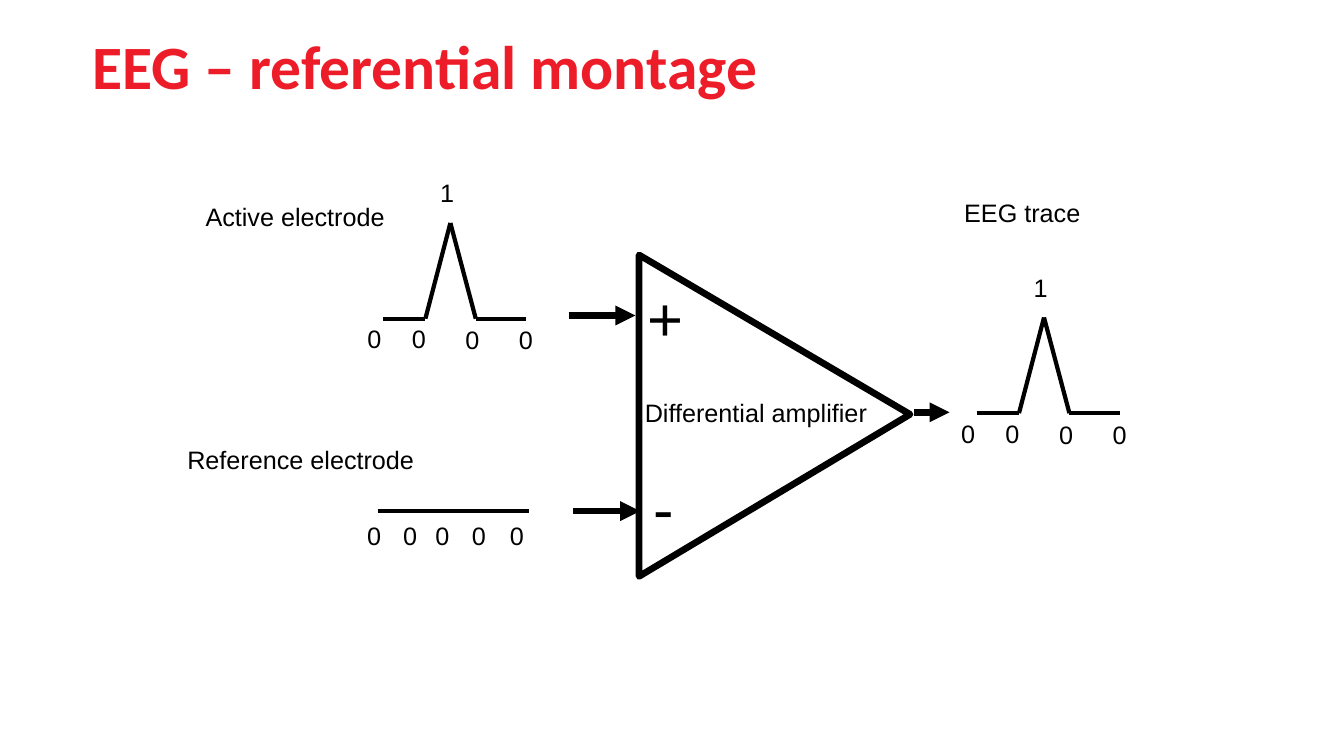
from itertools import pairwise

from lxml import etree
from pptx import Presentation
from pptx.dml.color import RGBColor
from pptx.enum.shapes import MSO_CONNECTOR, MSO_SHAPE
from pptx.enum.text import MSO_ANCHOR, PP_ALIGN
from pptx.oxml.ns import qn
from pptx.util import Cm, Pt

LINE = MSO_CONNECTOR.STRAIGHT
LEFT, TOP = PP_ALIGN.LEFT, MSO_ANCHOR.TOP
BLACK = RGBColor(0, 0, 0)
RED = RGBColor(0xED, 0x1C, 0x29)
THIN, THICK = 3, 4.75
SMALL, LARGE = 18, 44

# All lengths are in cm.
TITLE = "EEG – referential montage"
LABELS = [  # text, left, top, width
    ("Active electrode", 4.93, 4.95, 5.16),
    ("Reference electrode", 4.47, 11.07, 6.91),
    ("EEG trace", 24.05, 4.85, 6.12),
    ("Differential amplifier", 16, 9.88, 6.12),
]
SIGNS = [("+", 16.08, 6.93, 1.42), ("-", 16.21, 11.71, 1.04)]
ARROWS = [  # left, middle, length
    (14.33, 7.95, 1.68),
    (14.45, 12.88, 1.68),
    (23.04, 10.39, 0.89),
]

# Points and digits are measured from the start of each trace.
SPIKE = (
    [(0, 0), (1.07, 0), (1.7, -2.41), (2.34, 0), (3.61, 0)],
    [("1", 1.19, -3.68), ("0", -0.64, 0), ("0", 0.48, 0),
     ("0", 1.83, 0.03), ("0", 3.18, 0.03)],
)
FLAT = (
    [(0, 0), (3.81, 0)],
    [("0", x, 0.1) for x in (-0.53, 0.38, 1.19, 2.11, 3.07)],
)
TRACES = [(9.65, 8.03, SPIKE), (9.53, 12.88, FLAT), (24.61, 10.41, SPIKE)]


def add_text(shapes, text, x, y, width, size=SMALL, wrap=False):
    height = 1.02 if size == SMALL else 2.13
    box = shapes.add_textbox(Cm(x), Cm(y), Cm(width), Cm(height))
    frame = box.text_frame
    frame.word_wrap = wrap
    para = frame.paragraphs[0]
    para.text = text
    para.font.name = "Arial"
    para.font.size = Pt(size)
    para.font.color.rgb = BLACK


def add_line(shapes, start, end, width, arrow=False):
    line = shapes.add_connector(LINE, *map(Cm, start + end))
    line.line.color.rgb = BLACK
    line.line.width = Pt(width)
    props = line._element.spPr
    etree.SubElement(props, qn("a:effectLst"))
    if arrow:
        tail = etree.SubElement(props.find(qn("a:ln")), qn("a:tailEnd"))
        tail.set("type", "triangle")


def add_trace(slide, x, y, trace):
    points, digits = trace
    shapes = slide.shapes.add_group_shape().shapes
    spots = [(x + dx, y + dy) for dx, dy in points]
    for start, end in pairwise(spots):
        add_line(shapes, start, end, THIN)
    for digit, dx, dy in digits:
        add_text(shapes, digit, x + dx, y + dy, 0.86)


def set_title(slide):
    title = slide.shapes.title
    title.left, title.top = Cm(2.08), Cm(0.58)
    title.width, title.height = Cm(23.65), Cm(2.13)
    frame = title.text_frame
    frame.vertical_anchor = TOP
    para = frame.paragraphs[0]
    para.text = TITLE
    para.alignment = LEFT
    para.font.name = "Calibri"
    para.font.size = Pt(LARGE)
    para.font.bold = True
    para.font.color.rgb = RED


def add_amp(slide):
    amp = slide.shapes.add_shape(
        MSO_SHAPE.ISOSCELES_TRIANGLE, Cm(15.47), Cm(7.06), Cm(8.1), Cm(6.83))
    amp.adjustments[0] = 0.496
    amp.rotation = 90
    amp.shadow.inherit = False
    amp.fill.background()
    amp.line.color.rgb = BLACK
    amp.line.width = Pt(THICK)


def main():
    deck = Presentation()
    deck.slide_width, deck.slide_height = Cm(33.87), Cm(19.05)
    slide = deck.slides.add_slide(deck.slide_layouts[5])
    set_title(slide)
    add_amp(slide)
    for sign, x, y, width in SIGNS:
        add_text(slide.shapes, sign, x, y, width, LARGE)
    for x, y, length in ARROWS:
        add_line(slide.shapes, (x, y), (x + length, y), THICK, arrow=True)
    for x, y, trace in TRACES:
        add_trace(slide, x, y, trace)
    for text, x, y, width in LABELS:
        add_text(slide.shapes, text, x, y, width, wrap=True)
    deck.save("out.pptx")


if __name__ == "__main__":
    main()
